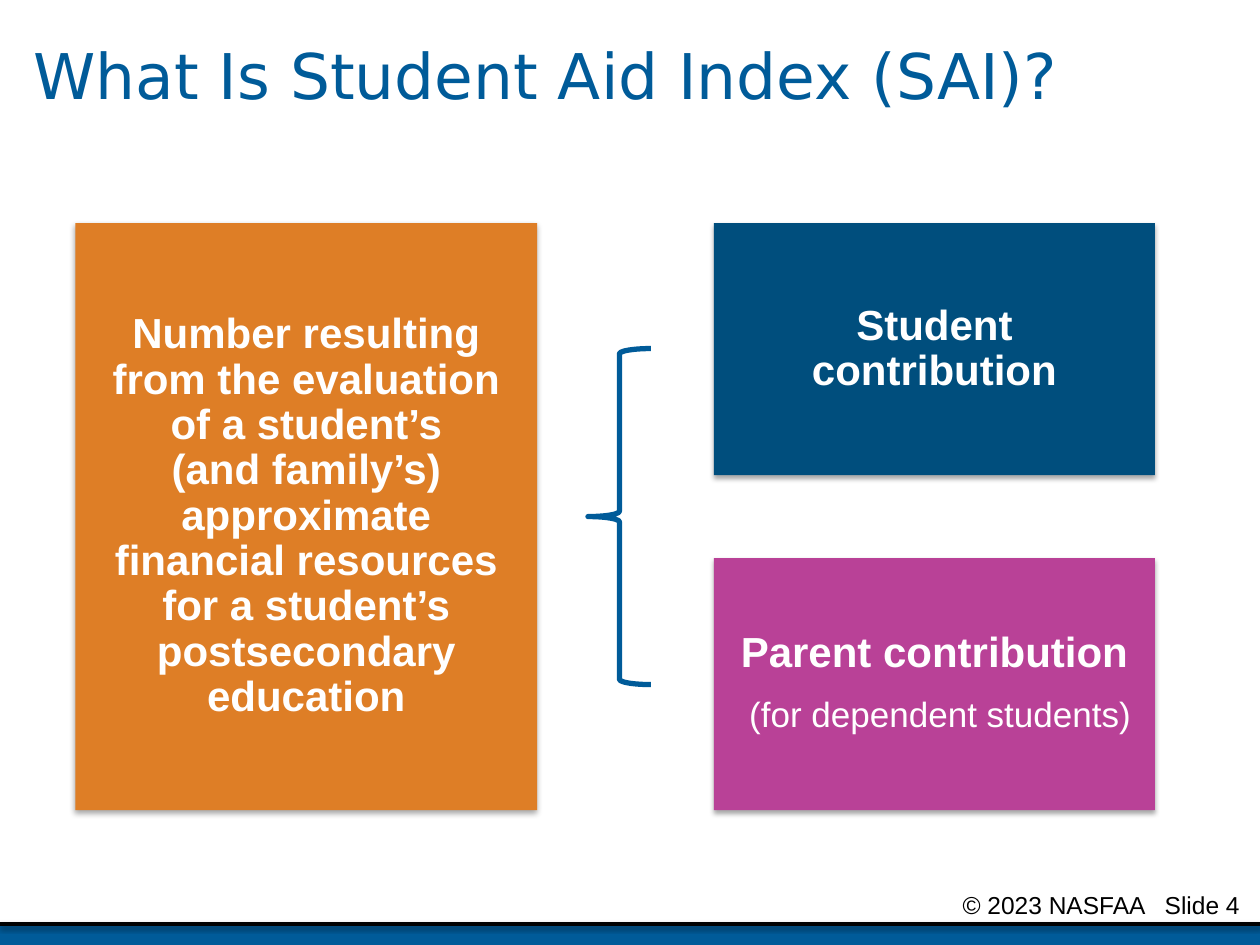
from dataclasses import dataclass

from lxml import etree
from pptx import Presentation
from pptx import util as u
from pptx.dml import color as col
from pptx.enum import shapes as sh, text as tx
from pptx.oxml import ns

Pt = u.Pt


@dataclass(frozen=True)
class Theme:
    blue: str = "005B99"
    navy: str = "004E7D"
    orange: str = "DE7E26"
    pink: str = "B94197"
    white: str = "FFFFFF"
    black: str = "000000"
    sans: str = "Arial"
    head: str = "DejaVu Sans"
    title: float = 36
    main: float = 24
    note: float = 20
    foot: float = 14


@dataclass(frozen=True)
class Run:
    text: str
    size: float
    color: str = "FFFFFF"
    bold: bool = False
    font: str = "Arial"


@dataclass(frozen=True)
class Card:
    left: float
    top: float
    width: float
    height: float
    fill: str
    paras: tuple[tuple[Run, ...], ...]


T = Theme()


def rgb(code: str) -> col.RGBColor:
    return col.RGBColor.from_string(code)


def add_run(para, run: Run) -> None:
    """Add one run; a line feed in it becomes a line break."""
    for i, part in enumerate(run.text.split("\n")):
        if i:
            para.add_line_break()
        r = para.add_run()
        r.text = part
        font = r.font
        font.name, font.size, font.bold = run.font, Pt(run.size), run.bold
        font.color.rgb = rgb(run.color)


def inset(frame, size: float) -> None:
    frame.margin_left = frame.margin_right = Pt(size)
    frame.margin_top = frame.margin_bottom = Pt(size)


def add_shade(shape, dist: float, alpha: int) -> None:
    """Give a shape or line a soft shadow straight below it."""
    props = shape.element.spPr
    box = props.find(ns.qn("a:effectLst"))
    if box is None:
        box = etree.SubElement(props, ns.qn("a:effectLst"))
    shade = etree.SubElement(
        box, ns.qn("a:outerShdw"), blurRad=str(Pt(3.1)), dist=str(Pt(dist)),
        dir="5400000", rotWithShape="0")
    tint = etree.SubElement(shade, ns.qn("a:srgbClr"), val=T.black)
    etree.SubElement(tint, ns.qn("a:alpha"), val=str(alpha * 1000))


def add_rect(slide, left: float, top: float, width: float, height: float,
             fill: str):
    rect = slide.shapes.add_shape(
        sh.MSO_SHAPE.RECTANGLE, Pt(left), Pt(top), Pt(width), Pt(height))
    rect.shadow.inherit = False
    rect.fill.solid()
    rect.fill.fore_color.rgb = rgb(fill)
    rect.line.fill.background()
    return rect


def add_card(slide, card: Card) -> None:
    rect = add_rect(slide, card.left, card.top, card.width, card.height,
                    card.fill)
    add_shade(rect, 1.8, 35)
    frame = rect.text_frame
    frame.word_wrap = True
    frame.vertical_anchor = tx.MSO_ANCHOR.MIDDLE
    inset(frame, 10.8)
    for i, runs in enumerate(card.paras):
        para = frame.add_paragraph() if i else frame.paragraphs[0]
        para.alignment = tx.PP_ALIGN.CENTER
        para.line_spacing = 0.9
        para.space_after = Pt(8.4)
        for run in runs:
            add_run(para, run)


def add_foot(slide) -> None:
    """Bar, rule and copyright line."""
    top = 528
    add_rect(slide, 0, top, 720, 12, T.blue)
    box = slide.shapes.add_textbox(Pt(550), Pt(508.5), Pt(168), Pt(18))
    frame = box.text_frame
    frame.word_wrap = True
    inset(frame, 0)
    para = frame.paragraphs[0]
    tabs = etree.SubElement(para._p.get_or_add_pPr(), ns.qn("a:tabLst"))
    etree.SubElement(tabs, ns.qn("a:tab"), pos=str(Pt(115.5)), algn="l")
    add_run(para, Run("© 2023 NASFAA\tSlide 4", T.foot, T.black))
    rule = slide.shapes.add_connector(
        sh.MSO_CONNECTOR.STRAIGHT, Pt(0), Pt(top), Pt(720), Pt(top))
    rule.line.color.rgb = rgb(T.black)
    rule.line.width = Pt(2)
    add_shade(rule, 1.6, 38)


def add_brace(slide) -> None:
    brace = slide.shapes.add_shape(
        sh.MSO_SHAPE.LEFT_BRACE, Pt(336), Pt(199.2), Pt(36), Pt(192))
    brace.shadow.inherit = False
    brace.fill.background()
    brace.line.color.rgb = rgb(T.blue)
    brace.line.width = Pt(3)


def add_title(slide, words: str) -> None:
    title = slide.shapes.title
    title.left, title.top = Pt(12), Pt(0)
    title.width, title.height = Pt(702), Pt(90)
    frame = title.text_frame
    frame.word_wrap = True
    frame.auto_size = tx.MSO_AUTO_SIZE.NONE
    frame.vertical_anchor = tx.MSO_ANCHOR.MIDDLE
    para = frame.paragraphs[0]
    para.alignment = tx.PP_ALIGN.LEFT
    para.line_spacing = 0.9
    add_run(para, Run(words, T.title, T.blue, font=T.head))


def bold(words: str) -> Run:
    return Run(words, T.main, bold=True)


def main() -> None:
    deck = Presentation()
    deck.slide_width, deck.slide_height = Pt(720), Pt(540)
    slide = deck.slides.add_slide(deck.slide_layouts[5])
    add_title(slide, "What Is Student Aid Index (SAI)?")
    add_foot(slide)

    # Cards: the whole on the left, its two parts on the right
    top, high, gap = 127.5, 144, 47.5
    left, wide = 408, 252
    cards = (
        Card(43, top, 264, 2 * high + gap, T.orange, ((bold(
            "Number resulting from the evaluation of a student’s\n"
            "(and family’s) approximate financial resources for a "
            "student’s postsecondary education"),),)),
        Card(left, top, wide, high, T.navy,
             ((bold("Student contribution"),),)),
        Card(left, top + high + gap, wide, high, T.pink,
             ((bold("Parent contribution"),),
              (Run(" ", T.main), Run("(for dependent students)", T.note)))),
    )
    for card in cards:
        add_card(slide, card)
    add_brace(slide)
    deck.save("out.pptx")


if __name__ == "__main__":
    main()
